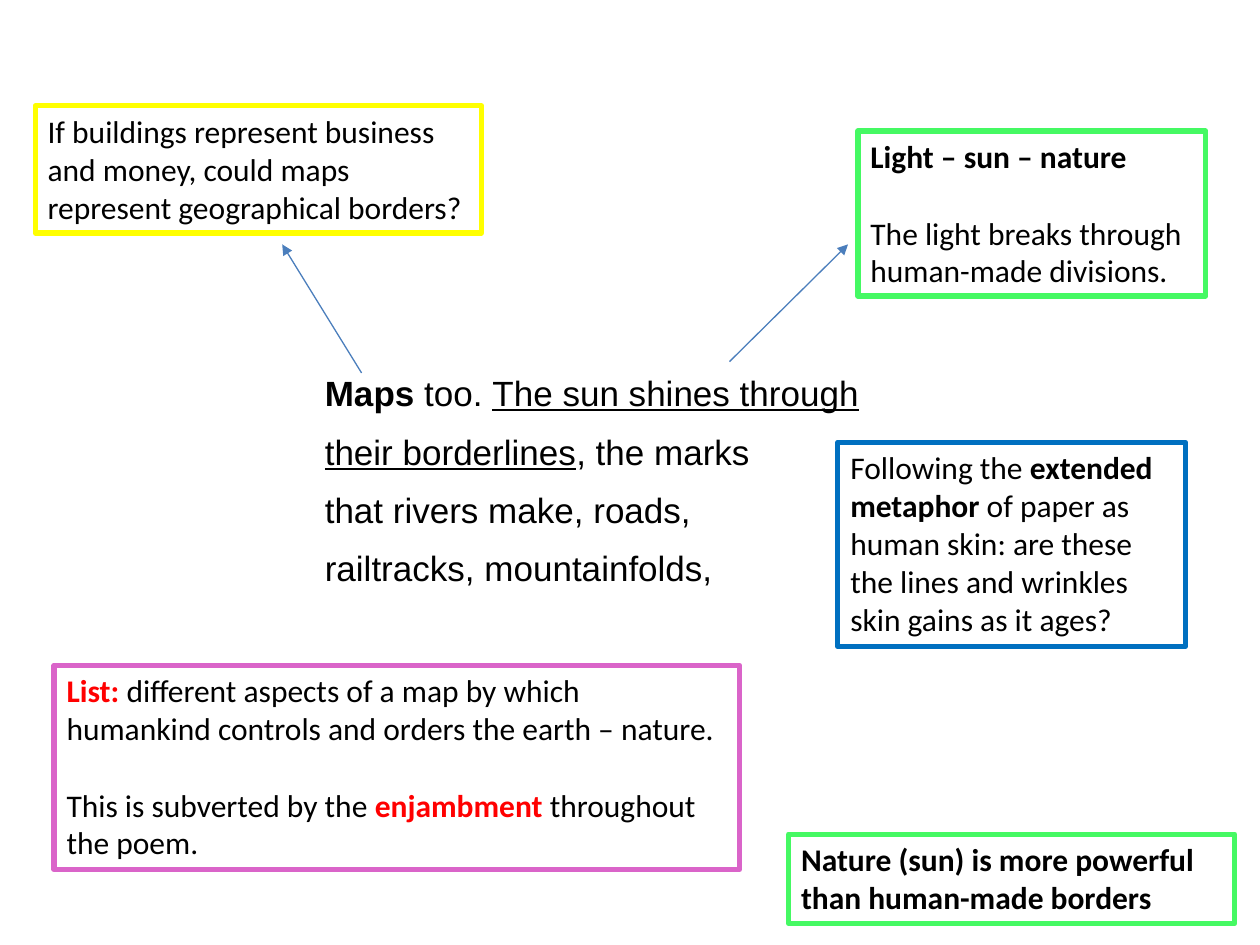
from lxml.etree import SubElement
from pptx import Presentation
from pptx.dml.color import RGBColor
from pptx.enum.shapes import MSO_CONNECTOR
from pptx.enum.text import MSO_AUTO_SIZE
from pptx.oxml.ns import qn
from pptx.util import Inches, Pt


def rgb(code):
    return RGBColor.from_string(code)


def add_text(paras, at, font="Calibri", size=18, line=None, gap=0, space=1):
    """Each paragraph is a list of (text, marks): b bold, u underlined, r red."""
    box = slide.shapes.add_textbox(*map(Inches, at))
    if line:
        box.line.color.rgb = rgb(line)
        box.line.width = Pt(3)
    frame = box.text_frame
    frame.word_wrap = True
    frame.auto_size = MSO_AUTO_SIZE.SHAPE_TO_FIT_TEXT
    for i, runs in enumerate(paras):
        para = frame.add_paragraph() if i else frame.paragraphs[0]
        para.line_spacing = space
        para.space_after = Pt(gap if i < len(paras) - 1 else 0)
        for text, marks in runs:
            run = para.add_run()
            run.text = text
            run.font.name = font
            run.font.size = Pt(size)
            run.font.bold = "b" in marks
            run.font.underline = "u" in marks
            run.font.color.rgb = rgb("FF0000" if "r" in marks else "000000")


deck = Presentation()
deck.slide_width, deck.slide_height = Inches(10), Inches(7.5)
slide = deck.slides.add_slide(deck.slide_layouts[6])

poem = [
    [("Maps ", "b"), ("too. ", ""), ("The sun shines through", "u")],
    [("their borderlines", "u"), (", the marks", "")],
    [("that rivers make, roads,", "")],
    [("railtracks, mountainfolds,", "")],
]
add_text(poem, (2.48, 2.88, 5, 1.87), font="Arial", size=20, gap=8, space=1.06)

notes = [
    ("FFFF00", (0.28, 0.84, 3.54, 1.01), [
        [("If buildings represent business and money, could maps "
          "represent geographical borders?", "")]]),
    ("45F963", (6.81, 1.04, 2.76, 1.31), [
        [("Light – sun – nature", "b")],
        [("The light breaks through human-made divisions.", "")]]),
    ("DA64C9", (0.43, 5.28, 5.44, 1.62), [
        [("List: ", "br"),
         ("different aspects of a map by which humankind controls "
          "and orders the earth – nature.", "")],
        [("This is subverted by the ", ""), ("enjambment", "br"),
         (" throughout the poem.", "")]]),
    ("45F963", (6.26, 6.62, 3.54, 0.71), [
        [("Nature (sun) is more powerful than human-made borders", "b")]]),
    ("0070C0", (6.65, 3.51, 2.76, 1.62), [
        [("Following the ", ""), ("extended metaphor ", "b"),
         ("of paper as human skin: are these the lines and wrinkles "
          "skin gains as it ages?", "")]]),
]
for line, at, paras in notes:
    add_text(paras, at, line=line, gap=22)

for ends in [(2.87, 2.96, 2.24, 1.94), (5.79, 2.87, 6.73, 1.94)]:
    arrow = slide.shapes.add_connector(MSO_CONNECTOR.STRAIGHT, *map(Inches, ends))
    arrow.line.color.rgb = rgb("4B7EBC")
    arrow.line.width = Pt(0.75)
    SubElement(arrow.line._get_or_add_ln(), qn("a:tailEnd"), type="triangle")
    SubElement(arrow._element.spPr, qn("a:effectLst"))

deck.save("out.pptx")
